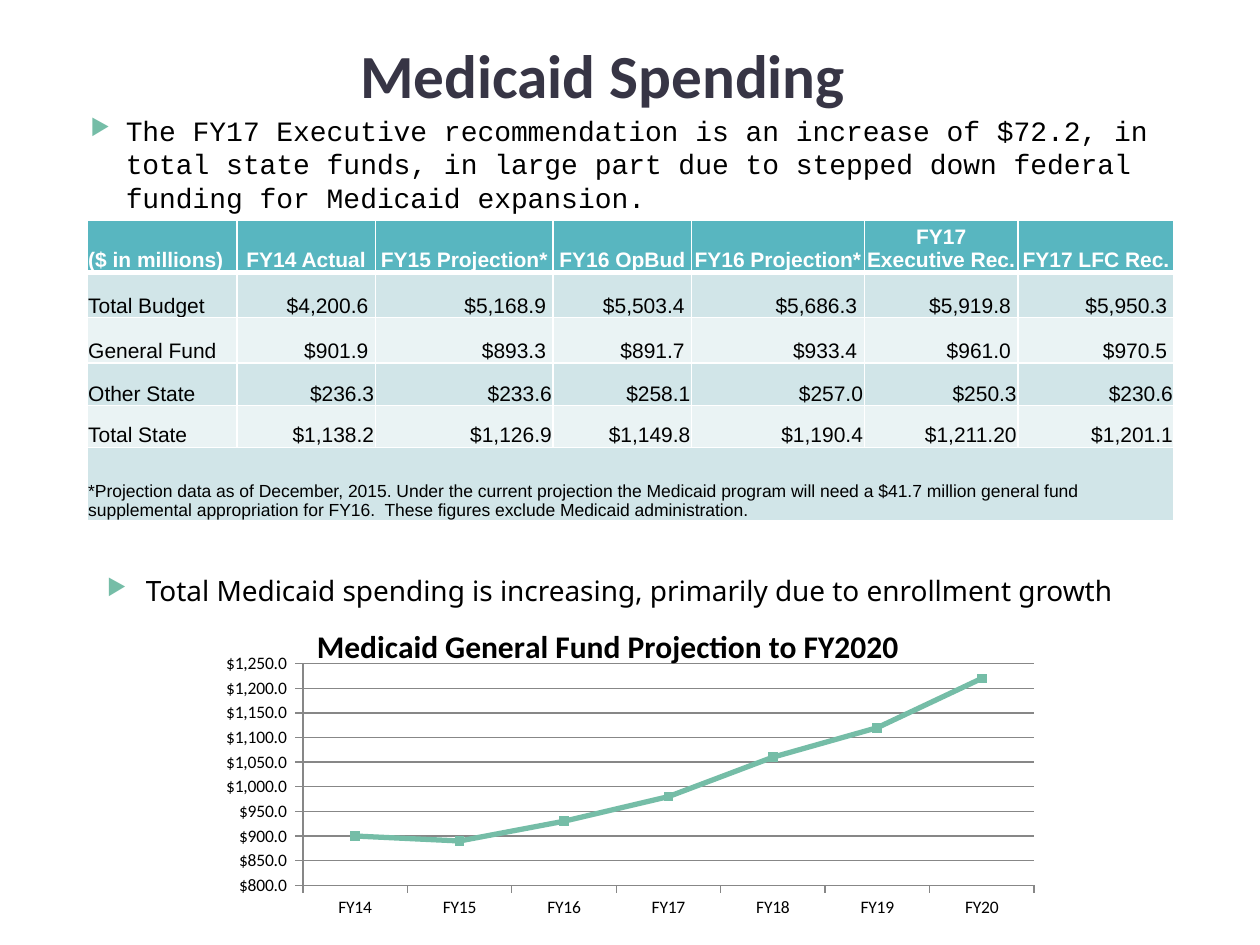
from lxml import etree
from pptx import Presentation
from pptx.chart.data import CategoryChartData
from pptx.dml.color import RGBColor
from pptx.enum.chart import XL_CHART_TYPE, XL_MARKER_STYLE, XL_TICK_MARK
from pptx.enum.text import MSO_ANCHOR, PP_ALIGN
from pptx.oxml import parse_xml
from pptx.oxml.ns import nsdecls, qn
from pptx.util import Inches, Pt

LINE_MARKERS = XL_CHART_TYPE.LINE_MARKERS
SQUARE = XL_MARKER_STYLE.SQUARE
TICK_OUTSIDE = XL_TICK_MARK.OUTSIDE
BOTTOM = MSO_ANCHOR.BOTTOM
LEFT, CENTER, RIGHT = PP_ALIGN.LEFT, PP_ALIGN.CENTER, PP_ALIGN.RIGHT

BLACK = RGBColor(0x00, 0x00, 0x00)
WHITE = RGBColor(0xFF, 0xFF, 0xFF)
NAVY = RGBColor(0x37, 0x35, 0x45)
GREEN = RGBColor(0x75, 0xBD, 0xA7)
TEAL = RGBColor(0x58, 0xB6, 0xC0)
BAND_DARK = RGBColor(0xD1, 0xE5, 0xE8)
BAND_LIGHT = RGBColor(0xEA, 0xF3, 0xF4)
GRAY = RGBColor(0x87, 0x87, 0x87)


def style_font(font, name, size, color, bold=False):
    values = {"name": name, "size": Pt(size), "bold": bold}
    for attribute, value in values.items():
        setattr(font, attribute, value)
    font.color.rgb = color


def set_layout(parent, position, inner=False):
    """Place a chart title or plot area by fractions (x, y, w, h) of the chart."""
    layout = parent.find(qn("c:layout"))
    if layout is None:
        layout = parse_xml(f"<c:layout {nsdecls('c')}/>")
        text = parent.find(qn("c:tx"))
        parent.insert(0 if text is None else 1, layout)
    manual = etree.SubElement(layout, qn("c:manualLayout"))
    if inner:
        etree.SubElement(manual, qn("c:layoutTarget"), val="inner")
    for tag in ("xMode", "yMode"):
        etree.SubElement(manual, qn(f"c:{tag}"), val="edge")
    for tag, fraction in zip("xywh", position):
        etree.SubElement(manual, qn(f"c:{tag}"), val=str(fraction))


prs = Presentation()
prs.slide_width, prs.slide_height = Inches(10), Inches(7.5)
slide = prs.slides.add_slide(prs.slide_layouts[6])

# Heading
heading = slide.shapes.add_textbox(Inches(0.12), Inches(0.25), Inches(9.33), Inches(1.2))
heading.text_frame.word_wrap = True
heading_line = heading.text_frame.paragraphs[0]
heading_line.text = "Medicaid Spending"
heading_line.alignment = CENTER
style_font(heading_line.font, "Calibri", 35, NAVY, bold=True)

# Spending table
header = ["($ in millions)", "FY14 Actual", "FY15 Projection*", "FY16 OpBud",
          "FY16 Projection*", "FY17 Executive Rec.", "FY17 LFC Rec."]
budget_rows = [
    ["Total Budget", "$4,200.6 ", "$5,168.9 ", "$5,503.4 ", "$5,686.3 ", "$5,919.8 ", "$5,950.3 "],
    ["General Fund", "$901.9 ", "$893.3 ", "$891.7 ", "$933.4 ", "$961.0 ", "$970.5 "],
    ["Other State", "$236.3", "$233.6", "$258.1", "$257.0", "$250.3", "$230.6"],
    ["Total State", "$1,138.2", "$1,126.9", "$1,149.8", "$1,190.4", "$1,211.20", "$1,201.1"],
]
footnote = ("*Projection data as of December, 2015. Under the current projection the Medicaid "
            "program will need a $41.7 million general fund supplemental appropriation for FY16.  "
            "These figures exclude Medicaid administration.")
rows = [header, *budget_rows, [footnote] + [""] * 6]
column_widths = [1.19, 1.1, 1.41, 1.1, 1.37, 1.22, 1.24]
row_heights = [0.33, 0.36, 0.36, 0.34, 0.33, 0.58]
cell_format = {"vertical_anchor": BOTTOM, "margin_left": Inches(0.01), "margin_top": Inches(0.01),
               "margin_right": Inches(0.01), "margin_bottom": 0}

table = slide.shapes.add_table(len(rows), len(header), Inches(0.69), Inches(1.75),
                               Inches(sum(column_widths)), Inches(sum(row_heights))).table
for column, width in zip(table.columns, column_widths):
    column.width = Inches(width)
for row, height in zip(table.rows, row_heights):
    row.height = Inches(height)

last_row = len(rows) - 1
table.cell(last_row, 0).merge(table.cell(last_row, len(header) - 1))
for r, row in enumerate(rows):
    for c, text in enumerate(row):
        cell = table.cell(r, c)
        for attribute, value in cell_format.items():
            setattr(cell, attribute, value)
        cell.fill.solid()
        cell.fill.fore_color.rgb = TEAL if r == 0 else BAND_DARK if r % 2 else BAND_LIGHT
        borders = {"lnL": 1, "lnR": 1, "lnT": 3 if r == 1 else 1, "lnB": 3 if r == 0 else 1}
        for place, (side, points) in enumerate(borders.items()):
            cell._tc.get_or_add_tcPr().insert(place, parse_xml(
                f'<a:{side} {nsdecls("a")} w="{Pt(points)}"><a:solidFill>'
                f'<a:srgbClr val="{WHITE}"/></a:solidFill></a:{side}>'))
        paragraph = cell.text_frame.paragraphs[0]
        paragraph.text = text
        paragraph.alignment = LEFT if c == 0 else CENTER if r == 0 else RIGHT
        style_font(paragraph.font, "Arial", 10 if r == last_row else 12,
                   WHITE if r == 0 else BLACK, bold=r == 0)

# General fund projection chart
projection = CategoryChartData(number_format='"$"#,##0.0_);[Red]\\("$"#,##0.0\\)')
projection.categories = [f"FY{year}" for year in range(14, 21)]
projection.add_series("Series 1", [900, 890, 930, 980, 1060, 1120, 1220])
chart = slide.shapes.add_chart(LINE_MARKERS, Inches(1.67), Inches(4.58),
                               Inches(6.67), Inches(2.75), projection).chart
chart.has_legend = False
style_font(chart.font, "Calibri", 10, BLACK)
chart.has_title = True
chart_heading = chart.chart_title.text_frame.paragraphs[0]
chart_heading.text = "Medicaid General Fund Projection to FY2020"
style_font(chart_heading.runs[0].font, "Calibri", 18, BLACK, bold=True)
set_layout(chart.chart_title._element, (0.12, 0.12))
set_layout(chart._chartSpace.chart.plotArea, (0.11, 0.25, 0.87, 0.64), inner=True)

dollars = chart.value_axis
dollar_format = {"minimum_scale": 800, "maximum_scale": 1250, "major_unit": 50,
                 "has_major_gridlines": True}
for attribute, value in dollar_format.items():
    setattr(dollars, attribute, value)
dollars.major_gridlines.format.line.color.rgb = GRAY
for axis in (dollars, chart.category_axis):
    axis.major_tick_mark = TICK_OUTSIDE
    axis.format.line.color.rgb = GRAY

chart.plots[0].vary_by_categories = False
fund_line = chart.plots[0].series[0]
fund_line.smooth = False
fund_line.format.line.color.rgb = GREEN
fund_line.format.line.width = Pt(3)
fund_line.marker.style = SQUARE
fund_line.marker.size = 5
fund_line.marker.format.fill.solid()
fund_line.marker.format.fill.fore_color.rgb = GREEN
fund_line.marker.format.line.color.rgb = GREEN

# Bulleted statements: text, box, left indent, hanging indent, font
statements = [
    ("The FY17 Executive recommendation is an increase of $72.2, in total state funds, in large "
     "part due to stepped down federal funding for Medicaid expansion.",
     (0.5, 0.85, 8.96, 0.9), 0.4, 0.28, "Courier New"),
    ("Total Medicaid spending is increasing, primarily due to enrollment growth",
     (0.75, 4.5, 8.71, 0.67), 0.31, 0.31, "Noto Sans"),
]
for text, box, indent, hanging, font_name in statements:
    statement = slide.shapes.add_textbox(*map(Inches, box))
    statement.text_frame.word_wrap = True
    paragraph = statement.text_frame.paragraphs[0]
    paragraph.text = text
    properties = paragraph._p.get_or_add_pPr()
    properties.set("marL", str(Inches(indent)))
    properties.set("indent", str(-Inches(hanging)))
    bullet_color = etree.SubElement(properties, qn("a:buClr"))
    etree.SubElement(bullet_color, qn("a:srgbClr"), val=str(GREEN))
    etree.SubElement(properties, qn("a:buSzPct"), val="80000")
    etree.SubElement(properties, qn("a:buChar"), char="▶")
    style_font(paragraph.font, font_name, 16, BLACK)

prs.save("out.pptx")
